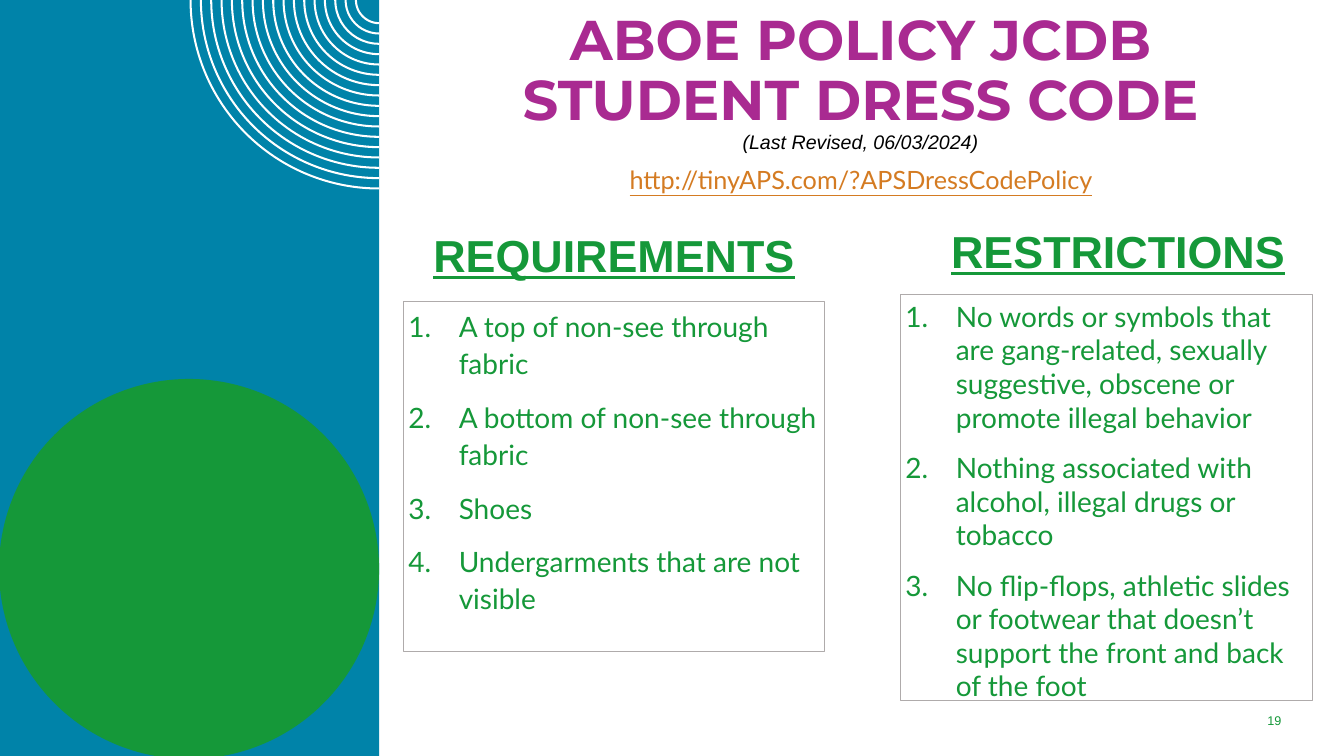
from lxml.etree import SubElement
from pptx import Presentation
from pptx.dml.color import RGBColor
from pptx.enum.shapes import MSO_SHAPE
from pptx.enum.text import MSO_ANCHOR, PP_ALIGN
from pptx.oxml.ns import qn
from pptx.util import Pt

PX = 9144
QUARTER_TURN = 5400000
COLORS = {
    "blue": "0083A9",
    "green": "159839",
    "purple": "A92A91",
    "orange": "D47B22",
    "border": "AFABAB",
    "white": "FFFFFF",
    "black": "000000",
}
REQUIREMENTS = [
    "A top of non-see through fabric",
    "A bottom of non-see through fabric",
    "Shoes",
    "Undergarments that are not visible",
]
RESTRICTIONS = [
    "No words or symbols that are gang-related, sexually suggestive, obscene or promote illegal behavior",
    "Nothing associated with alcohol, illegal drugs or tobacco",
    "No flip-flops, athletic slides or footwear that doesn’t support the front and back of the foot",
]


class DressCodeSlide:
    """Holds the style and the current slide, and draws each kind of element."""

    def __init__(self, presentation):
        self.slide = presentation.slides.add_slide(presentation.slide_layouts[6])

    def color(self, name):
        return RGBColor.from_string(COLORS[name])

    def paint(self, shape, fill):
        shape.shadow.inherit = False
        shape.fill.solid()
        shape.fill.fore_color.rgb = self.color(fill)
        shape.line.fill.background()

    def panel(self, kind, box, fill):
        shape = self.slide.shapes.add_shape(kind, *[value * PX for value in box])
        self.paint(shape, fill)

    def bend(self, segment, radius, start, sweep):
        arc = SubElement(segment.getparent(), qn("a:arcTo"))
        arc.set("wR", str(radius))
        arc.set("hR", str(radius))
        arc.set("stAng", str(start))
        arc.set("swAng", str(sweep))
        segment.getparent().replace(segment, arc)

    def quarter_rings(self, center_x, outer, inner, count, thickness, fill):
        center = center_x * PX
        step = (outer - inner) / (count - 1)
        radii = [round((outer - step * index) * PX) for index in range(count)]
        builder = self.slide.shapes.build_freeform(center - radii[0], 0)
        for radius in radii:
            hole = radius - thickness * PX
            if radius != radii[0]:
                builder.move_to(center - radius, 0)
            builder.add_line_segments([(center, radius), (center, hole), (center - hole, 0)], close=True)
        shape = builder.convert_to_shape()
        segments = list(shape._element.iter(qn("a:lnTo")))
        for radius, outside, inside in zip(radii, segments[::3], segments[2::3]):
            self.bend(outside, radius, 2 * QUARTER_TURN, -QUARTER_TURN)
            self.bend(inside, radius - thickness * PX, QUARTER_TURN, QUARTER_TURN)
        self.paint(shape, fill)

    def text_box(self, box):
        shape = self.slide.shapes.add_textbox(*[value * PX for value in box])
        shape.text_frame.word_wrap = True
        return shape

    def run(self, paragraph, text, size, font, color, bold=False, italic=False, underline=False):
        run = paragraph.add_run()
        run.text = text
        run.font.size = Pt(size)
        run.font.name = font
        run.font.color.rgb = self.color(color)
        run.font.bold = bold
        run.font.italic = italic
        run.font.underline = underline

    def label(self, box, text, size, font, color, anchor=MSO_ANCHOR.TOP, **style):
        frame = self.text_box(box).text_frame
        frame.vertical_anchor = anchor
        paragraph = frame.paragraphs[0]
        paragraph.alignment = PP_ALIGN.CENTER
        self.run(paragraph, text, size, font, color, **style)

    def title(self, box, lines, note):
        paragraph = self.text_box(box).text_frame.paragraphs[0]
        paragraph.alignment = PP_ALIGN.CENTER
        paragraph.line_spacing = 0.9
        for line in lines:
            self.run(paragraph, line, 40, "Montserrat", "purple", bold=True)
            paragraph.add_line_break()
        self.run(paragraph, note, 14, "Arial", "black", italic=True)

    def numbered_list(self, box, items, line_spacing):
        shape = self.text_box(box)
        shape.line.color.rgb = self.color("border")
        shape.line.width = Pt(0.75)
        frame = shape.text_frame
        frame.margin_left = frame.margin_right = 5 * PX
        frame.margin_top = frame.margin_bottom = 5 * PX
        for index, item in enumerate(items):
            paragraph = frame.add_paragraph() if index else frame.paragraphs[0]
            paragraph.line_spacing = line_spacing
            paragraph.space_after = Pt(12)
            properties = paragraph._p.get_or_add_pPr()
            properties.set("marL", str(50 * PX))
            properties.set("indent", str(-50 * PX))
            SubElement(properties, qn("a:buFont"), typeface="+mj-lt")
            SubElement(properties, qn("a:buAutoNum"), type="arabicPeriod")
            self.run(paragraph, item, 20, "Lato", "green")


def main():
    presentation = Presentation()
    presentation.slide_width = 1333 * PX
    presentation.slide_height = 750 * PX
    page = DressCodeSlide(presentation)

    page.panel(MSO_SHAPE.RECTANGLE, (-1, 0, 377, 753), "blue")
    page.quarter_rings(376, 188, 24, 17, 2, "white")
    page.panel(MSO_SHAPE.OVAL, (-1, 376, 377, 377), "green")

    page.title((374, 7, 959, 168), ["ABOE POLICY JCDB", "STUDENT DRESS CODE"], "(Last Revised, 06/03/2024)")
    page.label((375, 158, 958, 40), "http://tinyAPS.com/?APSDressCodePolicy", 18, "Lato", "orange", underline=True)

    heading = {"size": 32, "font": "Arial", "color": "green", "bold": True, "underline": True}
    page.label((400, 221, 418, 57), "REQUIREMENTS", **heading)
    page.numbered_list((400, 299, 418, 347), REQUIREMENTS, 1.1)
    page.label((900, 217, 418, 57), "RESTRICTIONS", **heading)
    page.numbered_list((893, 292, 409, 403), RESTRICTIONS, 1.0)
    page.label((1210, 700, 108, 30), "19", 9, "Arial", "green", anchor=MSO_ANCHOR.MIDDLE)

    presentation.save("out.pptx")


if __name__ == "__main__":
    main()
